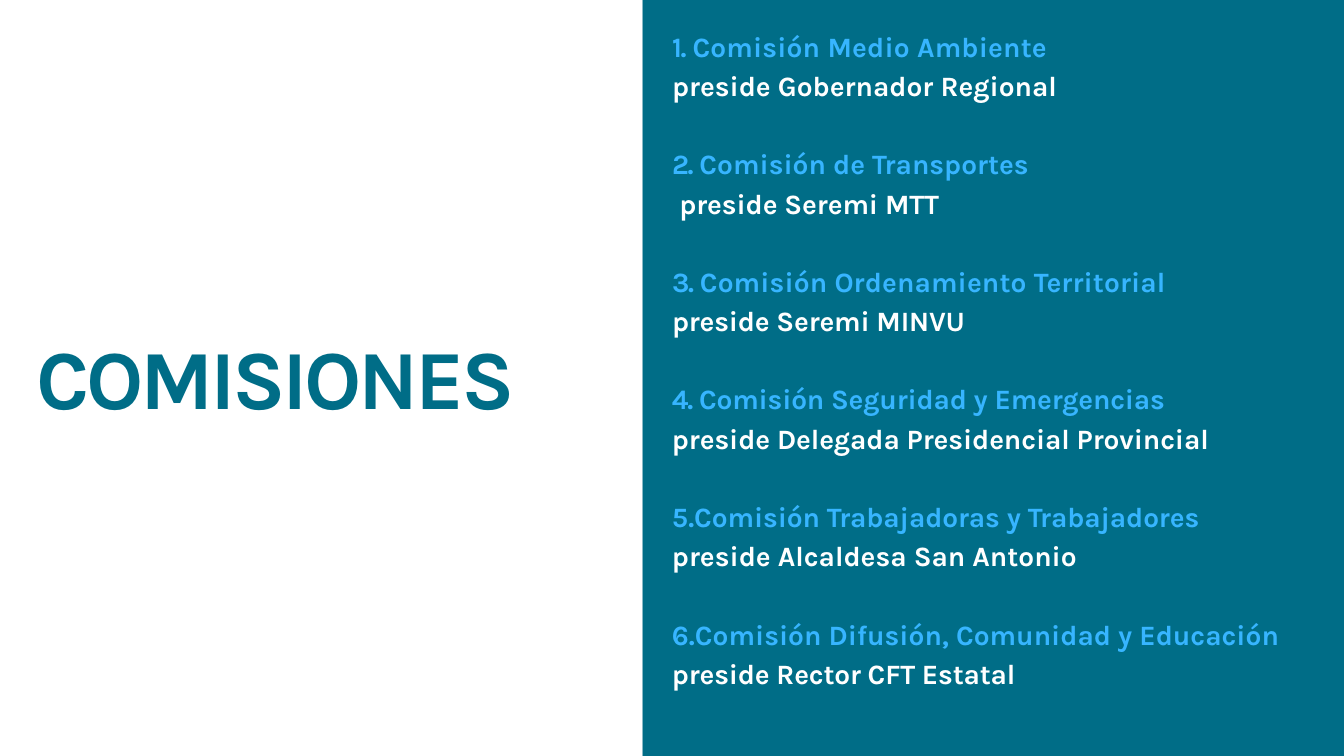
from pptx import Presentation
from pptx.dml.color import RGBColor
from pptx.enum.shapes import MSO_SHAPE
from pptx.enum.text import MSO_AUTO_SIZE
from pptx.oxml.ns import qn
from pptx.util import Inches, Pt
from lxml import etree

RECTANGLE = MSO_SHAPE.RECTANGLE
FIT_SHAPE = MSO_AUTO_SIZE.SHAPE_TO_FIT_TEXT
TEAL, BLUE, WHITE = "006D87", "37B5FF", "FFFFFF"
BLANK_LAYOUT = 6
SPLIT = 9.56
LIST_LEFT, LIST_TOP, LIST_STEP = 9.99, 0.34, 1.75

# Number, name, chair, box width, letter spacing of name and chair
TYPED_COMMISSIONS = [
    ("1. ", "Comisión Medio Ambiente", "preside Gobernador Regional", 6.08, 0.2, 0),
    ("2. ", "Comisión de Transportes", "preside Seremi MTT", 5.65, 0, -0.1),
    ("3. ", "Comisión Ordenamiento Territorial", "preside Seremi MINVU", 7.81, 0.15, -0.2),
    ("4. ", "Comisión Seguridad y Emergencias", "preside Delegada Presidencial Provincial",
     8.43, -0.2, -0.1),
]
# Name, chair, space before, letter spacing of name and chair
NUMBERED_COMMISSIONS = [
    ("Comisión Trabajadoras y Trabajadores", "preside Alcaldesa San Antonio", 0.9, -0.1, 0),
    ("Comisión Difusión, Comunidad y Educación", "preside Rector CFT Estatal", 42, 0, -0.2),
]


def color(value):
    return RGBColor.from_string(value)


def add_panel(slide, left, width, fill, opacity=100):
    panel = slide.shapes.add_shape(RECTANGLE, Inches(left), 0, Inches(width), Inches(11.25))
    panel.shadow.inherit = False
    panel.fill.solid()
    panel.fill.fore_color.rgb = color(fill)
    panel.line.fill.background()
    if opacity < 100:
        solid = panel.fill._xPr.find(qn("a:solidFill"))
        etree.SubElement(solid[0], qn("a:alpha"), val=str(opacity * 1000))


def add_text_box(slide, left, top, width, height):
    box = slide.shapes.add_textbox(Inches(left), Inches(top), Inches(width), Inches(height))
    frame = box.text_frame
    settings = {"word_wrap": True, "auto_size": FIT_SHAPE, "margin_left": 0,
                "margin_top": Inches(0.01), "margin_right": 0, "margin_bottom": 0}
    for name, value in settings.items():
        setattr(frame, name, value)
    return frame


def format_paragraph(paragraph, space_before, line_spacing=None, margin=0.01, indent=0):
    paragraph.space_before = Pt(space_before)
    paragraph.line_spacing = line_spacing
    properties = paragraph._p.get_or_add_pPr()
    properties.set("marL", str(Inches(margin)))
    properties.set("indent", str(Inches(indent)))


def add_run(paragraph, text, fill, size=30, spacing=0):
    run = paragraph.add_run()
    run.text = text
    for name, value in {"name": "Karla", "size": Pt(size), "bold": True}.items():
        setattr(run.font, name, value)
    run.font.color.rgb = color(fill)
    run._r.get_or_add_rPr().set("spc", str(round(spacing * 100)))


def add_commission(paragraph, name, chair, name_spacing, chair_spacing):
    add_run(paragraph, name, BLUE, spacing=name_spacing)
    paragraph.add_line_break()
    add_run(paragraph, chair, WHITE, spacing=chair_spacing)


def number_paragraph(paragraph, start):
    etree.SubElement(paragraph._p.get_or_add_pPr(), qn("a:buAutoNum"),
                     type="arabicPeriod", startAt=str(start))


def main():
    presentation = Presentation()
    presentation.slide_width, presentation.slide_height = Inches(20), Inches(11.25)
    slide = presentation.slides.add_slide(presentation.slide_layouts[BLANK_LAYOUT])

    # Right panel
    add_panel(slide, SPLIT, 20 - SPLIT, TEAL)

    # Commissions with typed numbers; the second has a hanging indent
    for index, (number, name, chair, width, *spacings) in enumerate(TYPED_COMMISSIONS):
        frame = add_text_box(slide, LIST_LEFT, LIST_TOP + index * LIST_STEP, width, 1.19)
        paragraph = frame.paragraphs[0]
        margin, indent = (0.12, -0.11) if index == 1 else (0.01, 0)
        format_paragraph(paragraph, 0.9, 1.17, margin, indent)
        add_run(paragraph, number, BLUE, spacing=-1.4)
        add_commission(paragraph, name, chair, *spacings)

    # Commissions with automatic numbers
    first = len(TYPED_COMMISSIONS)
    frame = add_text_box(slide, LIST_LEFT, LIST_TOP + first * LIST_STEP, 9.44, 2.94)
    for index, (name, chair, space_before, *spacings) in enumerate(NUMBERED_COMMISSIONS):
        paragraph = frame.add_paragraph() if index else frame.paragraphs[0]
        format_paragraph(paragraph, space_before, 1.17)
        number_paragraph(paragraph, first + 1)
        add_commission(paragraph, name, chair, *spacings)

    # Left panel and title
    add_panel(slide, 0, SPLIT, WHITE, opacity=84)
    title = add_text_box(slide, 0.54, 4.83, 7.91, 1.53).paragraphs[0]
    format_paragraph(title, 1)
    add_run(title, "COMISIONES", TEAL, size=90, spacing=-3.7)

    presentation.save("out.pptx")


if __name__ == "__main__":
    main()
